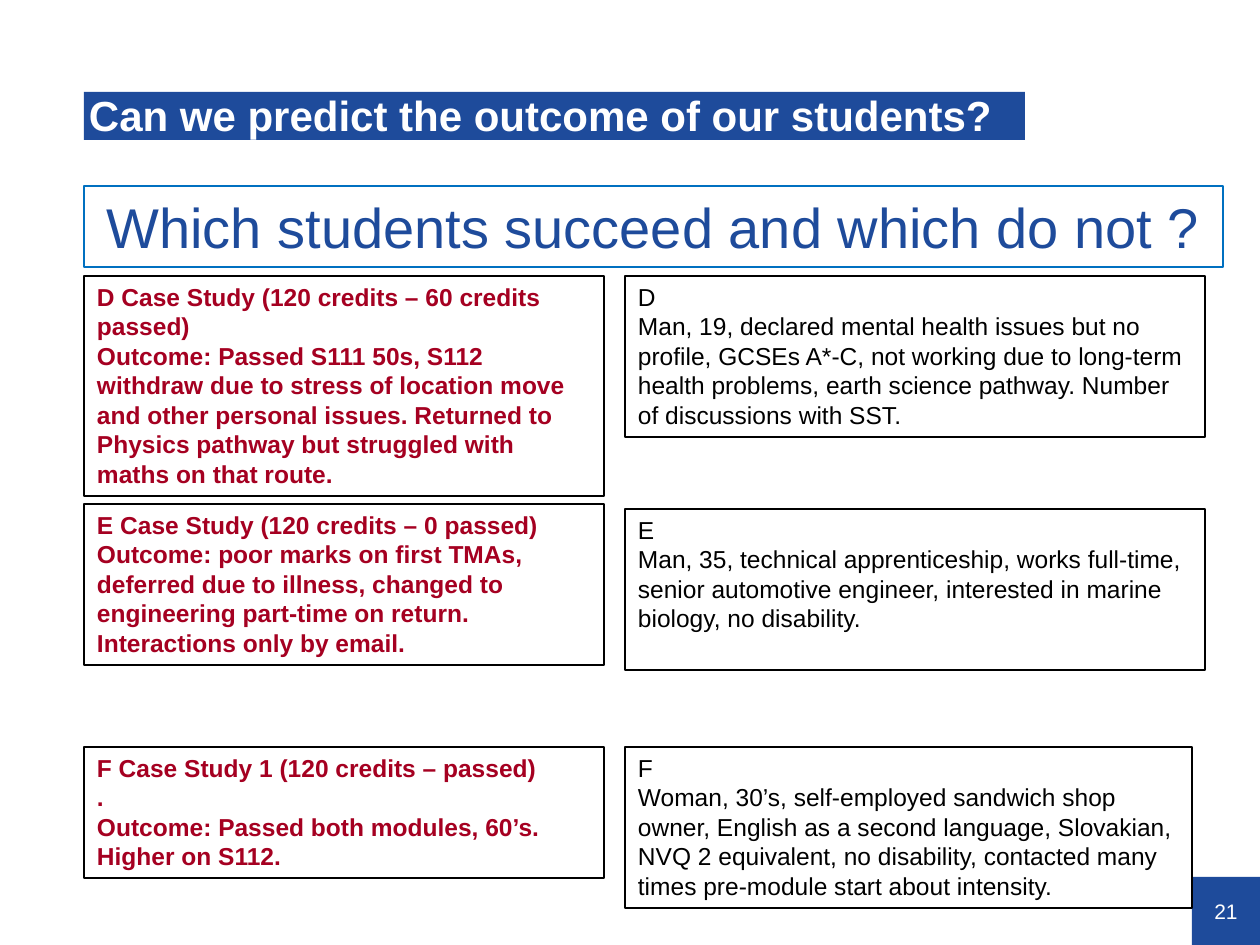
"""Build the slide comparing student case studies with their outcomes."""
from dataclasses import dataclass
from typing import Optional

from pptx import Presentation
from pptx.dml.color import RGBColor
from pptx.enum.shapes import MSO_SHAPE as Shape
from pptx.enum.text import MSO_ANCHOR as Anchor, PP_ALIGN as Align
from pptx.util import Emu, Pt

PX_PER_INCH = 126


@dataclass(frozen=True)
class Theme:
    font: str = "Arial"
    blue: str = "1E4B9B"
    border_blue: str = "0070C0"
    red: str = "A50021"
    black: str = "000000"
    white: str = "FFFFFF"
    title_size: int = 24
    question_size: int = 32
    body_size: int = 14
    number_size: int = 12
    border: float = 0.75


THEME = Theme()


@dataclass(frozen=True)
class Panel:
    left: int
    top: int
    width: int
    height: int
    lines: tuple[str, ...]
    size: int
    color: str
    bold: bool = False
    fill: Optional[str] = None
    border: Optional[str] = None
    align: Align = Align.LEFT
    anchor: Anchor = Anchor.TOP
    insets: tuple[int, int, int, int] = (13, 6, 13, 6)
    spacing: Optional[float] = None


@dataclass(frozen=True)
class Case:
    outcome_top: int
    outcome_height: int
    outcome: tuple[str, ...]
    profile_top: int
    profile_width: int
    profile: tuple[str, ...]


def px(length: int) -> Emu:
    """Turn pixels into EMU."""
    return Emu(round(length * 914400 / PX_PER_INCH))


def draw_panel(slide, panel: Panel) -> None:
    """Draw a rectangle with its text."""
    box = slide.shapes.add_shape(
        Shape.RECTANGLE, px(panel.left), px(panel.top), px(panel.width), px(panel.height)
    )
    box.shadow.inherit = False
    if panel.fill:
        box.fill.solid()
        box.fill.fore_color.rgb = RGBColor.from_string(panel.fill)
    else:
        box.fill.background()
    if panel.border:
        box.line.color.rgb = RGBColor.from_string(panel.border)
        box.line.width = Pt(THEME.border)
    else:
        box.line.fill.background()

    frame = box.text_frame
    frame.word_wrap = True
    frame.vertical_anchor = panel.anchor
    frame.margin_left, frame.margin_top, frame.margin_right, frame.margin_bottom = map(
        px, panel.insets
    )
    frame.text = "\n".join(panel.lines)
    for paragraph in frame.paragraphs:
        paragraph.alignment = panel.align
        if panel.spacing:
            paragraph.line_spacing = panel.spacing
        for run in paragraph.runs:
            run.font.name = THEME.font
            run.font.size = Pt(panel.size)
            run.font.bold = panel.bold
            run.font.color.rgb = RGBColor.from_string(panel.color)


def draw_case(slide, case: Case) -> None:
    """Draw a student's outcome beside the profile."""
    draw_panel(slide, Panel(
        84, case.outcome_top, 520, case.outcome_height, case.outcome,
        THEME.body_size, THEME.red, bold=True, border=THEME.black,
    ))
    draw_panel(slide, Panel(
        625, case.profile_top, case.profile_width, 161, case.profile,
        THEME.body_size, THEME.black, border=THEME.black,
    ))


HEADINGS = (
    Panel(
        1192, 877, 68, 68, ("21",), THEME.number_size, THEME.white, fill=THEME.blue,
        align=Align.CENTER, anchor=Anchor.MIDDLE, insets=(0, 0, 0, 0),
    ),
    Panel(
        84, 92, 941, 48, ("Can we predict the outcome of our students?",),
        THEME.title_size, THEME.white, bold=True, fill=THEME.blue,
        anchor=Anchor.MIDDLE, insets=(5, 3, 0, 0), spacing=0.9,
    ),
    Panel(
        84, 186, 1139, 81, ("Which students succeed and which do not ?",),
        THEME.question_size, THEME.blue, border=THEME.border_blue, align=Align.CENTER,
    ),
)

CASES = (
    Case(
        276, 220,
        (
            "D Case Study (120 credits – 60 credits passed)",
            "Outcome: Passed S111 50s, S112 withdraw due to stress of location move "
            "and other personal issues. Returned to Physics pathway but struggled "
            "with maths on that route.",
        ),
        276, 580,
        (
            "D",
            "Man, 19, declared mental health issues but no profile, GCSEs A*-C, not "
            "working due to long-term health problems, earth science pathway. Number "
            "of discussions with SST.",
        ),
    ),
    Case(
        504, 161,
        (
            "E Case Study (120 credits – 0 passed)",
            "Outcome: poor marks on first TMAs, deferred due to illness, changed to "
            "engineering part-time on return. Interactions only by email.",
        ),
        509, 580,
        (
            "E",
            "Man, 35, technical apprenticeship, works full-time, senior automotive "
            "engineer, interested in marine biology, no disability.",
        ),
    ),
    Case(
        747, 131,
        (
            "F Case Study 1 (120 credits – passed)",
            ".",
            "Outcome: Passed both modules, 60’s. Higher on S112.",
        ),
        747, 567,
        (
            "F",
            "Woman, 30’s, self-employed sandwich shop owner, English as a second "
            "language, Slovakian, NVQ 2 equivalent, no disability, contacted many "
            "times pre-module start about intensity.",
        ),
    ),
)


def main() -> None:
    """Build and save the slide."""
    deck = Presentation()
    deck.slide_width, deck.slide_height = px(1260), px(945)
    slide = deck.slides.add_slide(deck.slide_layouts[6])
    for heading in HEADINGS:
        draw_panel(slide, heading)
    for case in CASES:
        draw_case(slide, case)
    deck.save("out.pptx")


if __name__ == "__main__":
    main()
